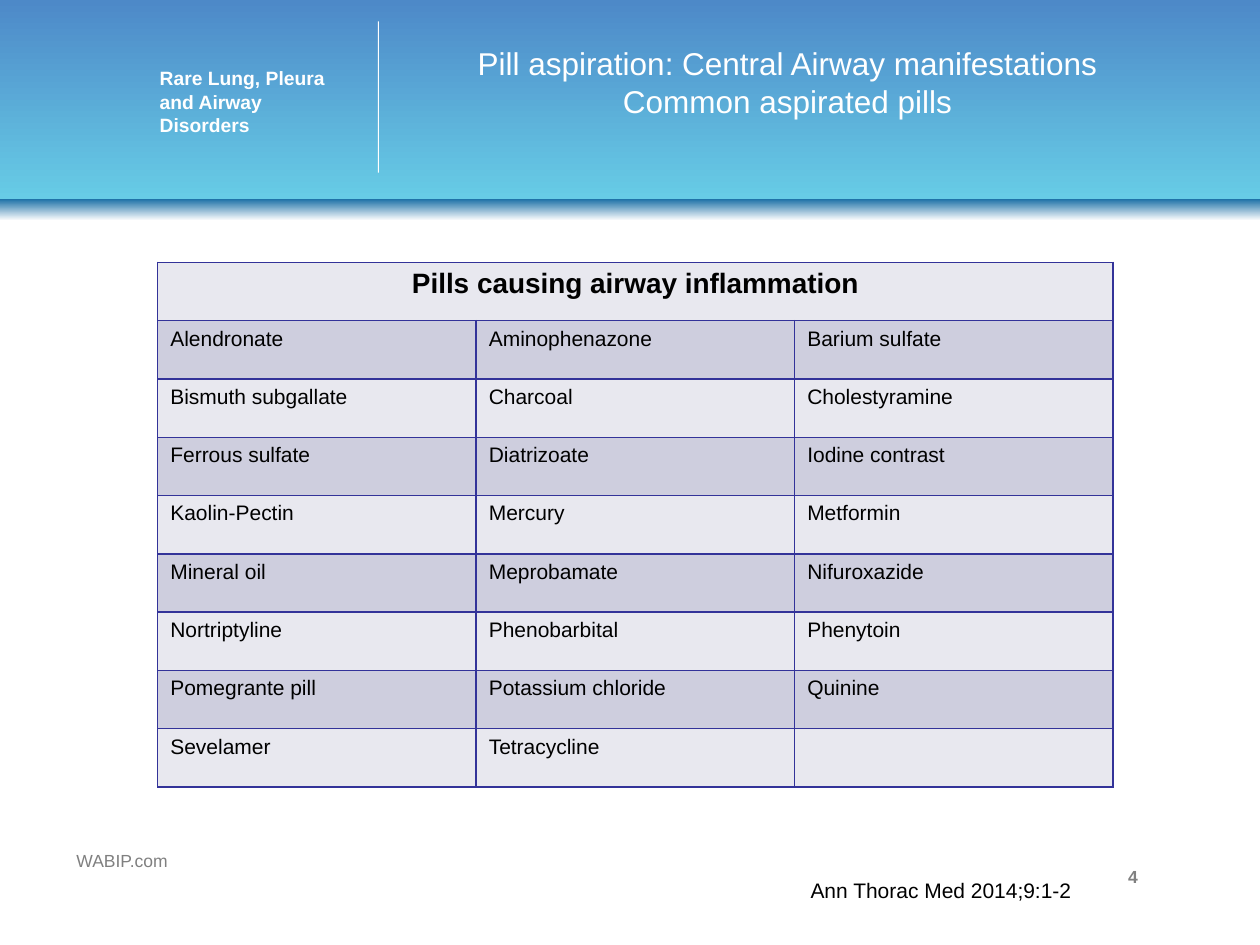
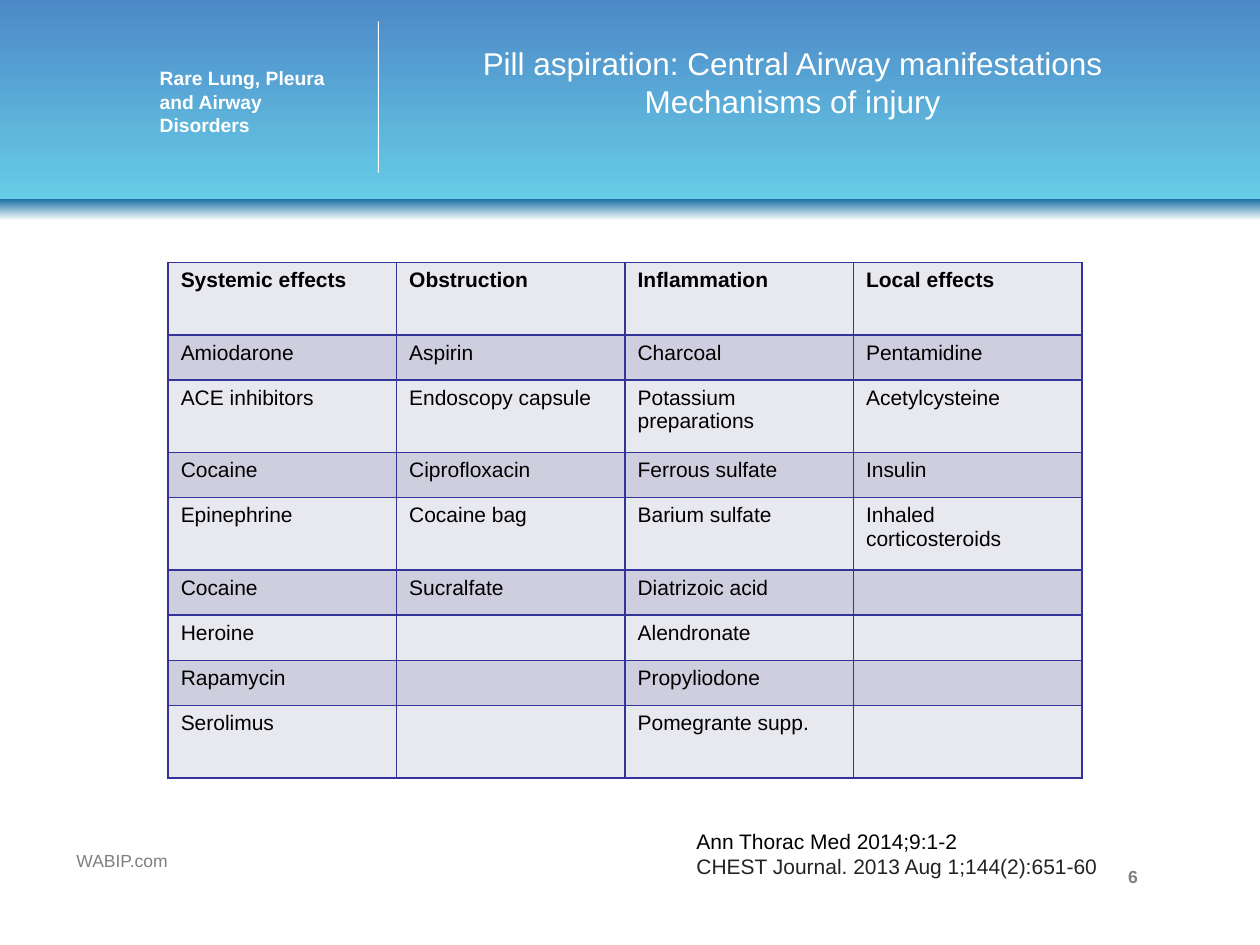
import itertools

import lxml.etree
import pptx
import pptx.dml.color
import pptx.enum.shapes
import pptx.enum.text
import pptx.oxml.ns
import pptx.util

Cm = pptx.util.Cm
LEFT = pptx.enum.text.PP_ALIGN.LEFT
CENTER = pptx.enum.text.PP_ALIGN.CENTER

FONT = "Arial"
COLORS = {
    "band_top": "4D89C8",
    "band_bottom": "67CCE6",
    "strip_top": "2073A8",
    "white": "FFFFFF",
    "black": "000000",
    "near_black": "232323",
    "footer": "808080",
    "row_light": "E8E8EF",
    "row_dark": "CECEDE",
    "border": "333399",
}

SLIDE_WIDTH, SLIDE_HEIGHT = 25.4, 19.05
BAND_BOX = (0, 0, SLIDE_WIDTH, 4.02)
FOOTER_BOX = (0.2, 17.02, 24.9, 1.01)

PILL_ROWS = [
    ["Pills causing airway inflammation", "", ""],
    ["Alendronate", "Aminophenazone", "Barium sulfate"],
    ["Bismuth subgallate", "Charcoal", "Cholestyramine"],
    ["Ferrous sulfate", "Diatrizoate", "Iodine contrast"],
    ["Kaolin-Pectin", "Mercury", "Metformin"],
    ["Mineral oil", "Meprobamate", "Nifuroxazide"],
    ["Nortriptyline", "Phenobarbital", "Phenytoin"],
    ["Pomegrante pill", "Potassium chloride", "Quinine"],
    ["Sevelamer", "Tetracycline", ""],
]

MECHANISM_ROWS = [
    ["Systemic effects", "Obstruction", "Inflammation", "Local effects"],
    ["Amiodarone", "Aspirin", "Charcoal", "Pentamidine"],
    ["ACE inhibitors", "Endoscopy capsule", "Potassium preparations", "Acetylcysteine"],
    ["Cocaine", "Ciprofloxacin", "Ferrous sulfate", "Insulin"],
    ["Epinephrine", "Cocaine bag", "Barium sulfate", "Inhaled corticosteroids"],
    ["Cocaine", "Sucralfate", "Diatrizoic acid", ""],
    ["Heroine", "", "Alendronate", ""],
    ["Rapamycin", "", "Propyliodone", ""],
    ["Serolimus", "", "Pomegrante supp.", ""],
]


def rgb(name):
    return pptx.dml.color.RGBColor.from_string(COLORS[name])


def write_paragraph(paragraph, text, size=12, color="black", bold=False, align=LEFT):
    paragraph.alignment = align
    if not text:
        end = lxml.etree.SubElement(paragraph._p, pptx.oxml.ns.qn("a:endParaRPr"))
        end.set("sz", str(size * 100))
        return
    paragraph.text = text
    for run in paragraph.runs:
        run.font.name = FONT
        run.font.size = pptx.util.Pt(size)
        run.font.bold = bold
        run.font.color.rgb = rgb(color)


def add_text(slide, box, lines, colors=("black",), **text_format):
    frame = slide.shapes.add_textbox(*map(Cm, box)).text_frame
    frame.word_wrap = True
    for index, (line, color) in enumerate(zip(lines, itertools.cycle(colors))):
        paragraph = frame.add_paragraph() if index else frame.paragraphs[0]
        write_paragraph(paragraph, line, color=color, **text_format)


def add_rectangle(slide, box, *fill_colors):
    shape = slide.shapes.add_shape(
        pptx.enum.shapes.MSO_SHAPE.RECTANGLE, *map(Cm, box))
    shape.shadow.inherit = False
    shape.line.fill.background()
    if len(fill_colors) == 1:
        shape.fill.solid()
        shape.fill.fore_color.rgb = rgb(fill_colors[0])
        return
    shape.fill.gradient()
    shape.fill.gradient_angle = 270
    for position, (stop, color) in enumerate(zip(shape.fill.gradient_stops, fill_colors)):
        stop.position = position
        stop.color.rgb = rgb(color)


def add_header(slide, box, title, title_left):
    left, top, width, height = box
    add_rectangle(slide, box, "band_top", "band_bottom")
    add_rectangle(slide, (left, top + height, width, 0.43), "strip_top", "white")
    add_text(slide, (left + 2.97, top + 1.22, 4.24, 1.68),
             ["Rare Lung, Pleura", "and Airway Disorders"],
             colors=["white"], size=11, bold=True)
    add_rectangle(slide, (left + 7.62, top + 0.43, 0.02, 3.05), "white")
    title_right = left + 24.13
    add_text(slide, (title_left, top + 0.76, title_right - title_left, 3.18),
             [title], colors=["white"], size=18, align=CENTER)


def add_footer(slide, box, number):
    left, top, width, height = box
    label_width, label_height = 4.52, 0.69
    add_text(slide, (left, top, label_width, label_height), ["WABIP.com"],
             colors=["footer"], size=10, align=CENTER)
    add_text(slide, (left + width - label_width, top + height - label_height,
                     label_width, label_height),
             [str(number)], colors=["footer"], size=10, bold=True, align=CENTER)


def set_borders(cell):
    properties = cell._tc.get_or_add_tcPr()
    for side in ("lnL", "lnR", "lnT", "lnB"):
        line = lxml.etree.SubElement(properties, pptx.oxml.ns.qn(f"a:{side}"), w="12700")
        fill = lxml.etree.SubElement(line, pptx.oxml.ns.qn("a:solidFill"))
        lxml.etree.SubElement(fill, pptx.oxml.ns.qn("a:srgbClr"), val=COLORS["border"])


def add_drug_table(slide, box, rows, row_heights, **header_format):
    column_count = len(rows[0])
    table = slide.shapes.add_table(len(rows), column_count, *map(Cm, box)).table
    for column in table.columns:
        column.width = Cm(box[2] / column_count)
    for row_index, (values, height) in enumerate(zip(rows, row_heights)):
        table.rows[row_index].height = Cm(height)
        text_format = {"bold": True, **header_format} if row_index == 0 else {}
        for column_index, value in enumerate(values):
            cell = table.cell(row_index, column_index)
            set_borders(cell)
            cell.fill.solid()
            cell.fill.fore_color.rgb = rgb("row_dark" if row_index % 2 else "row_light")
            write_paragraph(cell.text_frame.paragraphs[0], value, **text_format)
    return table


def add_slide(presentation, title, title_left, number):
    slide = presentation.slides.add_slide(presentation.slide_layouts[6])
    add_header(slide, BAND_BOX, title, title_left)
    add_footer(slide, FOOTER_BOX, number)
    return slide


def build_pill_slide(presentation):
    slide = add_slide(
        presentation,
        "Pill aspiration: Central Airway manifestations\vCommon aspirated pills", 7.62, 4)
    row_height = 10.58 / len(PILL_ROWS)
    table = add_drug_table(slide, (3.18, 5.29, 19.26, 10.58), PILL_ROWS,
                           [row_height] * len(PILL_ROWS), size=16, align=CENTER)
    table.cell(0, 0).merge(table.cell(0, 2))
    add_text(slide, (16.09, 17.57, 6.5, 0.76), ["Ann Thorac Med 2014;9:1-2"])


def build_mechanism_slide(presentation):
    slide = add_slide(
        presentation,
        "Pill aspiration: Central Airway manifestations\vMechanisms of injury", 7.83, 6)
    tall, short = 1.46, 0.91
    add_drug_table(slide, (3.39, 5.29, 18.42, 10.37), MECHANISM_ROWS,
                   [tall, short, tall, short, tall, short, short, short, tall])
    add_text(slide, (13.79, 16.57, 11.6, 1.3),
             ["Ann Thorac Med 2014;9:1-2", "CHEST Journal. 2013 Aug 1;144(2):651-60"],
             colors=["black", "near_black"])


def main():
    presentation = pptx.Presentation()
    presentation.slide_width = Cm(SLIDE_WIDTH)
    presentation.slide_height = Cm(SLIDE_HEIGHT)
    build_pill_slide(presentation)
    build_mechanism_slide(presentation)
    presentation.save("out.pptx")


if __name__ == "__main__":
    main()
